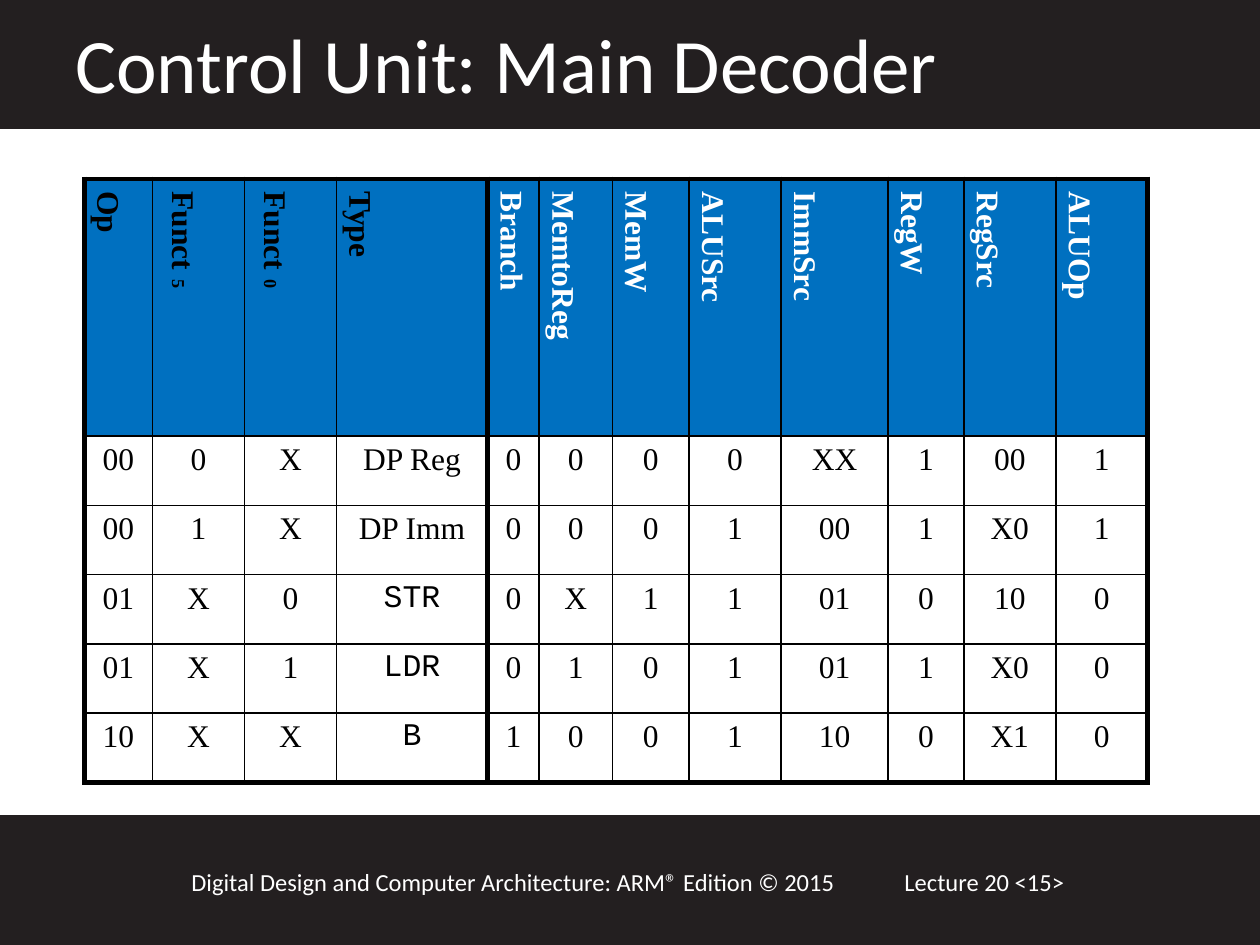
"""Build the main decoder truth table slide."""
from typing import NamedTuple

from lxml import etree
from pptx import Presentation
from pptx import util as u
from pptx.dml.color import RGBColor
from pptx.enum import shapes, text
from pptx.oxml.ns import qn

HUES = {"band": "231F20", "head": "0070C0", "ink": "000000", "pale": "FFFFFF"}
SERIF, MONO, SANS = "Times New Roman", "Courier New", "Calibri"
WIDTHS = [0.54, 0.73, 0.73, 1.2, 0.41, 0.58, 0.61, 0.73, 0.85, 0.6, 0.73, 0.73]
HEIGHTS = [1.64] + [0.55] * 5
INPUTS = 4
TYPE = 3
HEADS = ["Op", "Funct", "Funct", "Type", "Branch", "MemtoReg", "MemW",
         "ALUSrc", "ImmSrc", "RegW", "RegSrc", "ALUOp"]
SUBS = {1: "5", 2: "0"}
ROWS = [
    ["00", "0", "X", "DP Reg", "0", "0", "0", "0", "XX", "1", "00", "1"],
    ["00", "1", "X", "DP Imm", "0", "0", "0", "1", "00", "1", "X0", "1"],
    ["01", "X", "0", "STR", "0", "X", "1", "1", "01", "0", "10", "0"],
    ["01", "X", "1", "LDR", "0", "1", "0", "1", "01", "1", "X0", "0"],
    ["10", "X", "X", "B", "1", "0", "0", "1", "10", "0", "X1", "0"],
]
CODES = {"STR", "LDR", "B"}


class Box(NamedTuple):
    """Place of an item in inches."""
    left: float
    top: float
    width: float
    height: float


class Label(NamedTuple):
    """Words with their place and size."""
    words: str
    box: Box
    size: int


BANDS = [Box(0, 6.48, 10, 1.02), Box(0, 0, 10, 1.01)]
LABELS = [
    Label("Lecture 20 <15>", Box(7.08, 6.83, 2.17, 0.34), 14),
    Label("Digital Design and Computer Architecture: ARM® Edition © 2015",
          Box(1.42, 6.83, 5.75, 0.34), 14),
    Label("Control Unit: Main Decoder", Box(0.5, 0.08, 8.67, 0.84), 44),
]


def place(box: Box) -> list:
    """Turn a box into lengths."""
    return [u.Inches(side) for side in box]


def color(name: str) -> RGBColor:
    """Look up a colour by name."""
    return RGBColor.from_string(HUES[name])


def write(para, words: str, face: str, size: int, hue: str, bold: bool = False):
    """Add one styled run."""
    run = para.add_run()
    run.text = words
    font = run.font
    font.name, font.size, font.bold = face, u.Pt(size), bold
    font.color.rgb = color(hue)
    return run


def draw_band(slide, box: Box) -> None:
    """Draw a dark band across the slide."""
    band = slide.shapes.add_shape(shapes.MSO_SHAPE.RECTANGLE, *place(box))
    band.shadow.inherit = False
    band.fill.solid()
    band.fill.fore_color.rgb = color("band")
    band.line.color.rgb = color("band")
    band.line.width = u.Pt(2)


def draw_label(slide, label: Label) -> None:
    """Draw one pale line of text."""
    frame = slide.shapes.add_textbox(*place(label.box)).text_frame
    frame.word_wrap = True
    frame.auto_size = text.MSO_AUTO_SIZE.SHAPE_TO_FIT_TEXT
    write(frame.paragraphs[0], label.words, SANS, label.size, "pale")


def edge(cell, row: int, col: int) -> None:
    """Rule a cell, thick around the table and after the inputs."""
    thick = {
        "a:lnL": col in (0, INPUTS),
        "a:lnR": col in (INPUTS - 1, len(WIDTHS) - 1),
        "a:lnT": row == 0,
        "a:lnB": row == len(HEIGHTS) - 1,
    }
    props = cell._tc.get_or_add_tcPr()
    for spot, (tag, wide) in enumerate(thick.items()):
        line = etree.Element(qn(tag), w=str(u.Pt(3 if wide else 1)))
        fill = etree.SubElement(line, qn("a:solidFill"))
        etree.SubElement(fill, qn("a:srgbClr"), val=HUES["ink"])
        props.insert(spot, line)


def fill_cell(cell, row: int, col: int) -> None:
    """Write, fill and rule one cell."""
    para = cell.text_frame.paragraphs[0]
    props = para._p.get_or_add_pPr()
    props.set("marL", str(u.Inches(0.38)))
    props.set("indent", str(u.Inches(-0.38)))
    if row == 0:
        hue = "ink" if col < INPUTS else "pale"
        write(para, HEADS[col], SERIF, 18, hue, True)
        if col in SUBS:
            sub = write(para, SUBS[col], SERIF, 18, hue, True)
            sub.font._element.set("baseline", "-30000")
        cell.fill.solid()
        cell.fill.fore_color.rgb = color("head")
        cell._tc.get_or_add_tcPr().set("vert", "vert")
    else:
        words = ROWS[row - 1][col]
        face = MONO if col == TYPE and words in CODES else SERIF
        para.alignment = text.PP_ALIGN.CENTER
        write(para, words, face, 18, "ink")
        cell.fill.background()
    edge(cell, row, col)


def draw_table(slide) -> None:
    """Draw the decoder truth table."""
    box = Box(0.67, 1.42, sum(WIDTHS), sum(HEIGHTS))
    table = slide.shapes.add_table(len(HEIGHTS), len(WIDTHS), *place(box)).table
    table.first_row = table.horz_banding = False
    for col, width in enumerate(WIDTHS):
        table.columns[col].width = u.Inches(width)
    for row, height in enumerate(HEIGHTS):
        table.rows[row].height = u.Inches(height)
        for col in range(len(WIDTHS)):
            fill_cell(table.cell(row, col), row, col)


def main() -> None:
    """Build and save the slide."""
    deck = Presentation()
    deck.slide_width, deck.slide_height = u.Inches(10), u.Inches(7.5)
    slide = deck.slides.add_slide(deck.slide_layouts[6])
    for band in BANDS:
        draw_band(slide, band)
    for label in LABELS:
        draw_label(slide, label)
    draw_table(slide)
    deck.save("out.pptx")


if __name__ == "__main__":
    main()
